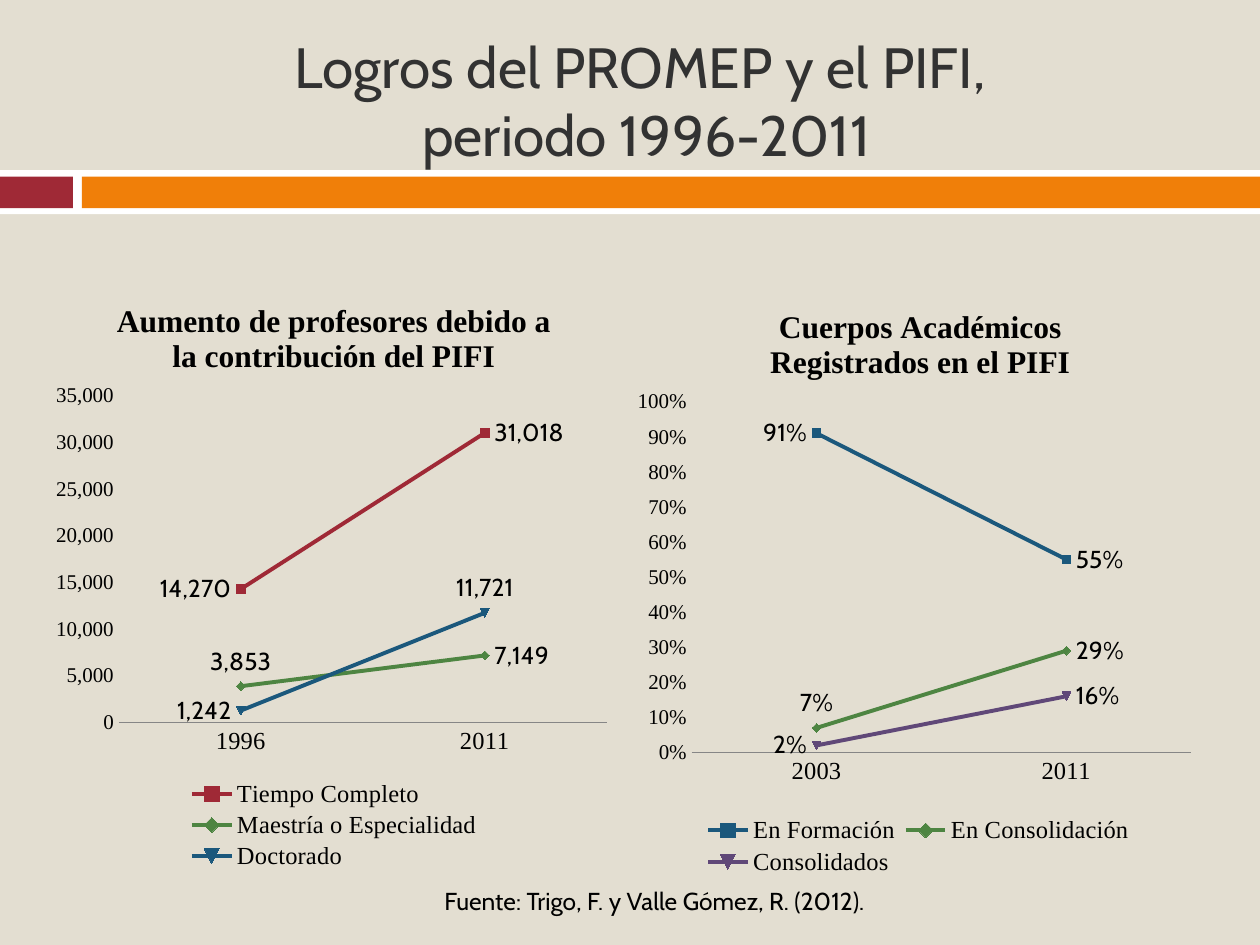
from lxml import etree
from pptx import Presentation
from pptx.chart.data import CategoryChartData
from pptx.dml.color import RGBColor
from pptx.enum import chart as ch, shapes, text
from pptx.oxml.ns import qn
from pptx.util import Cm, Pt

SAND = RGBColor(0xE3, 0xDE, 0xD1)
WHITE = RGBColor(0xFF, 0xFF, 0xFF)
RED = RGBColor(0x9F, 0x29, 0x36)
ORANGE = RGBColor(0xF0, 0x7F, 0x09)
GREEN = RGBColor(0x4E, 0x85, 0x42)
BLUE = RGBColor(0x1B, 0x58, 0x7C)
PURPLE = RGBColor(0x60, 0x48, 0x78)
INK = RGBColor(0x32, 0x32, 0x32)
BLACK = RGBColor(0, 0, 0)
GRAY = RGBColor(0x86, 0x86, 0x86)
SANS, SERIF = "Cabin", "Times New Roman"

LEFT, RIGHT, ABOVE = (ch.XL_LABEL_POSITION.LEFT, ch.XL_LABEL_POSITION.RIGHT,
                      ch.XL_LABEL_POSITION.ABOVE)

# Content
HEADING = "Logros del PROMEP y el PIFI, \vperiodo 1996-2011"
SOURCE = "Fuente: Trigo, F. y Valle Gómez, R. (2012)."
BANDS = [  # left, top, width, height in cm, colour
    (0, 3.43, 25.4, 0.89, WHITE),
    (0, 3.56, 1.47, 0.64, RED),
    (1.65, 3.56, 23.75, 0.64, ORANGE),
]
CHARTS = [  # each series: name, values, colour, label positions
    dict(left=12.67, title="Cuerpos Académicos\nRegistrados en el PIFI",
         years=["2003", "2011"], format="0%", top_value=1, step=0.1,
         series=[("En Formación", (0.91, 0.55), BLUE, (LEFT, RIGHT)),
                 ("En Consolidación", (0.07, 0.29), GREEN, (ABOVE, RIGHT)),
                 ("Consolidados", (0.02, 0.16), PURPLE, (LEFT, RIGHT))],
         layout={"title": (0.24, 0.05), "plotArea": (0.11, 0.21, 0.87, 0.58),
                 "legend": (0.12, 0.89, 0.77, 0.11)}),
    dict(left=0.89, title="Aumento de profesores debido a\nla contribución del PIFI",
         years=["1996", "2011"], format="#,##0", top_value=35000, step=5000,
         series=[("Tiempo Completo", (14270, 31018), RED, (LEFT, RIGHT)),
                 ("Maestría o Especialidad", (3853, 7149), GREEN, (ABOVE, RIGHT)),
                 ("Doctorado", (1242, 11721), BLUE, (LEFT, ABOVE))],
         layout={"title": (0.12, 0.04), "plotArea": (0.13, 0.2, 0.85, 0.54),
                 "legend": (0.25, 0.83, 0.51, 0.16)}),
]


def style(font, size, name=SANS, color=BLACK, bold=False):
    font.size, font.name, font.bold = Pt(size), name, bold
    font.color.rgb = color


def write(frame, words, align=None, **font_format):
    frame.text = words
    for paragraph in frame.paragraphs:
        if align is not None:
            paragraph.alignment = align
        style(paragraph.font, **font_format)
        for run in paragraph.runs:
            style(run.font, **font_format)


def place(part, box):
    """Give a chart part a manual layout in fractions of the chart."""
    for old in part.findall(qn("c:layout")):
        part.remove(old)
    layout = etree.Element(qn("c:layout"))
    manual = etree.SubElement(layout, qn("c:manualLayout"))
    if part.tag == qn("c:plotArea"):
        etree.SubElement(manual, qn("c:layoutTarget")).set("val", "inner")
    for mode in ("xMode", "yMode"):
        etree.SubElement(manual, qn("c:" + mode)).set("val", "edge")
    for key, fraction in zip("xywh", box):
        etree.SubElement(manual, qn("c:" + key)).set("val", str(fraction))
    # The layout comes first in the plot area, second elsewhere
    part.insert(0 if part.tag == qn("c:plotArea") else 1, layout)


def add_line_chart(slide, info):
    data = CategoryChartData(number_format=info["format"])
    data.categories = info["years"]
    for name, values, *_ in info["series"]:
        data.add_series(name, values)
    chart = slide.shapes.add_chart(
        ch.XL_CHART_TYPE.LINE_MARKERS, Cm(info["left"]), Cm(5.54),
        Cm(11.58), Cm(12.19), data).chart
    style(chart.font, 10)
    write(chart.chart_title.text_frame, info["title"], size=18, name=SERIF, bold=True)

    # Axes
    years, amounts = chart.category_axis, chart.value_axis
    for axis, size in ((years, 14), (amounts, 12)):
        axis.has_major_gridlines = False
        axis.major_tick_mark = axis.minor_tick_mark = ch.XL_TICK_MARK.NONE
        style(axis.tick_labels.font, size, SERIF)
    years.format.line.color.rgb = GRAY
    amounts.format.line.fill.background()
    amounts.minimum_scale, amounts.maximum_scale = 0, info["top_value"]
    amounts.major_unit = info["step"]
    amounts.tick_labels.number_format = info["format"]
    amounts.tick_labels.number_format_is_linked = False

    # Series and their labels
    chart.plots[0].vary_by_categories = False
    for series, (_, _, color, positions) in zip(chart.plots[0].series, info["series"]):
        series.smooth = False
        series.format.line.color.rgb = color
        series.format.line.width = Pt(2.25)
        series.marker.size = 5
        series.marker.format.fill.solid()
        series.marker.format.fill.fore_color.rgb = color
        series.marker.format.line.color.rgb = color
        series.data_labels.show_value = True
        series.data_labels.position = ABOVE
        style(series.data_labels.font, 14)
        for index, position in enumerate(positions):
            label = series.points[index].data_label
            style(label.font, 14)
            label.position = position

    # Legend and manual layout
    chart.has_legend = True
    chart.legend.position = ch.XL_LEGEND_POSITION.BOTTOM
    chart.legend.include_in_layout = False
    style(chart.legend.font, 14, SERIF)
    for part, box in info["layout"].items():
        place(chart.element.find(qn("c:chart")).find(qn("c:" + part)), box)


def main():
    deck = Presentation()
    deck.slide_width, deck.slide_height = Cm(25.4), Cm(19.05)
    slide = deck.slides.add_slide(deck.slide_layouts[5])
    slide.background.fill.solid()
    slide.background.fill.fore_color.rgb = SAND

    # Bands under the title
    for *box, color in BANDS:
        band = slide.shapes.add_shape(shapes.MSO_SHAPE.RECTANGLE, *map(Cm, box))
        band.shadow.inherit = False
        band.fill.solid()
        band.fill.fore_color.rgb = color
        band.line.fill.background()

    # Title
    title = slide.shapes.title
    title.left, title.top, title.width, title.height = map(Cm, (1.7, 0.64, 22.66, 2.74))
    title.text_frame.auto_size = text.MSO_AUTO_SIZE.NONE
    title.text_frame.vertical_anchor = text.MSO_ANCHOR.MIDDLE
    write(title.text_frame, HEADING, align=text.PP_ALIGN.CENTER, size=32.4, color=INK)

    for info in CHARTS:
        add_line_chart(slide, info)

    # Source line
    source = slide.shapes.add_textbox(Cm(8.71), Cm(17.73), Cm(9.4), Cm(0.86)).text_frame
    source.word_wrap = True
    source.auto_size = text.MSO_AUTO_SIZE.SHAPE_TO_FIT_TEXT
    write(source, SOURCE, size=14)

    deck.save("out.pptx")


if __name__ == "__main__":
    main()
